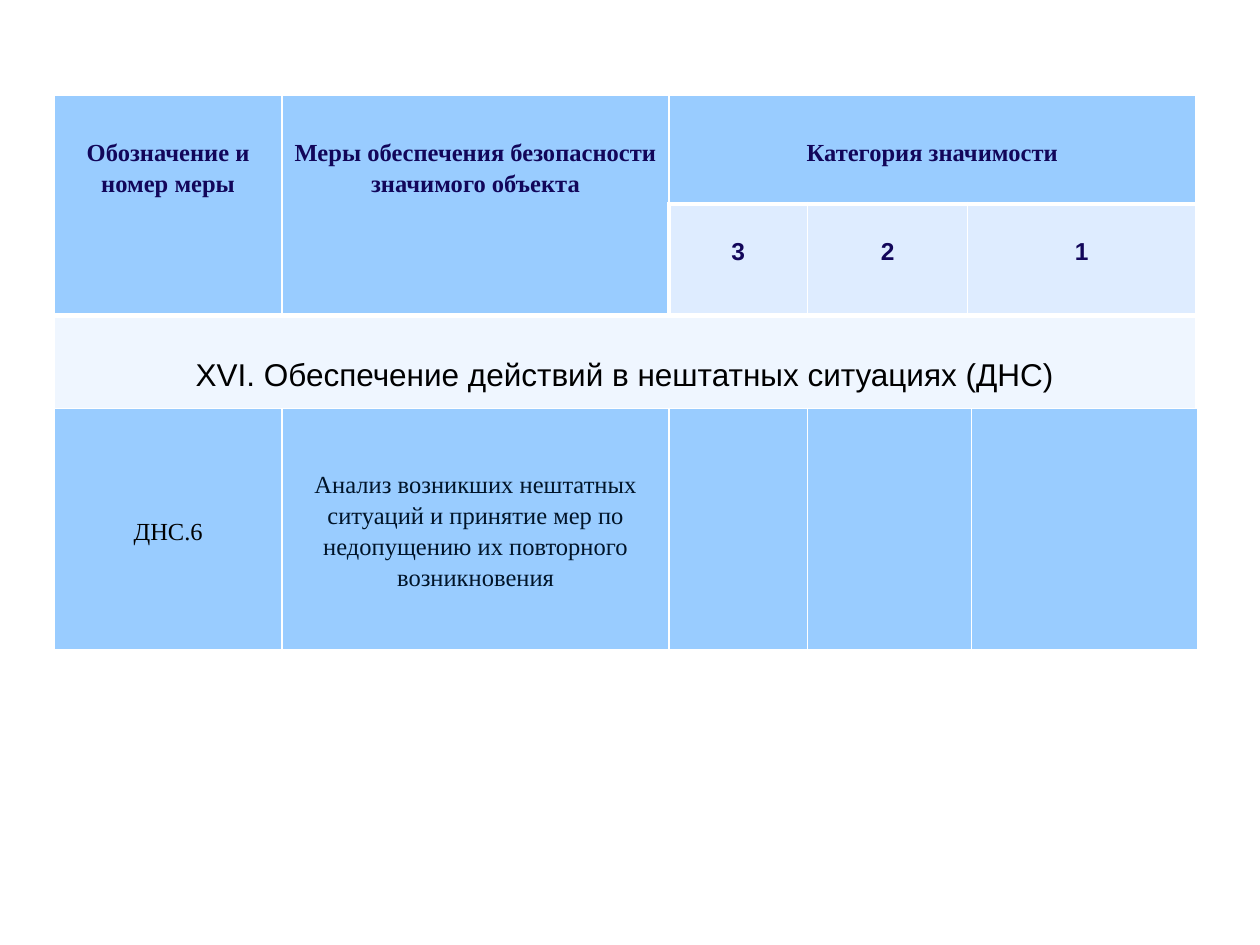
import dataclasses
import typing

import pptx
import pptx.dml.color
import pptx.enum.text
import pptx.oxml
import pptx.oxml.ns
import pptx.util

WIDE, HIGH = 10, 7.5
LEFT = 0.43
SERIF, SANS = "Times New Roman", "Arial"
HUES = {
    "head": "99CCFF", "level": "DEECFF", "band": "EFF6FF", "line": "FFFFFF",
    "navy": "12065A", "black": "000000", "ink": "001429",
}


@dataclasses.dataclass
class Item:
    row: int
    col: int
    text: str = ""
    fill: str = "head"
    hue: str = "navy"
    face: str = SERIF
    size: int = 14
    bold: bool = False
    rows: int = 1
    cols: int = 1
    top: float = 0.07
    mid: bool = False
    edges: tuple[int, int, int, int] = (1, 1, 1, 3)  # left, right, top, bottom


HEAD = [
    Item(0, 0, "Обозначение и номер меры", bold=True, rows=2, top=0.32),
    Item(0, 1, "Меры обеспечения безопасности значимого объекта",
         bold=True, rows=2, top=0.32),
    Item(0, 2, "Категория значимости", bold=True, cols=3, top=0.32),
    *[Item(1, 2 + i, level, "level", face=SANS, bold=True, top=0.27,
           edges=(1 if i else 3, 1, 3, 3)) for i, level in enumerate("321")],
    Item(2, 0, "XVI. Обеспечение действий в нештатных ситуациях (ДНС)",
         "band", "black", SANS, 18, cols=5, top=0.34, edges=(1, 1, 3, 1)),
]
BODY = [
    Item(0, 0, "ДНС.6", hue="black", mid=True),
    Item(0, 1, "Анализ возникших нештатных ситуаций и принятие мер по "
         "недопущению их повторного возникновения", hue="ink", mid=True),
    *[Item(0, col) for col in range(2, 5)],
]


def color(name: str) -> pptx.dml.color.RGBColor:
    return pptx.dml.color.RGBColor.from_string(HUES[name])


def edge(cell: typing.Any, sizes: tuple[int, int, int, int]) -> None:
    props = cell._tc.get_or_add_tcPr()
    for side, size in zip("LRTB", sizes):
        props.append(pptx.oxml.parse_xml(
            f'<a:ln{side} {pptx.oxml.ns.nsdecls("a")} w="{pptx.util.Pt(size)}">'
            f'<a:solidFill><a:srgbClr val="{HUES["line"]}"/></a:solidFill>'
            f'</a:ln{side}>'))


def write(cell: typing.Any, item: Item) -> None:
    serif = item.face == SERIF
    cell.margin_left = cell.margin_right = pptx.util.Inches(0.04 if serif else 0.1)
    cell.margin_top = pptx.util.Inches(item.top)
    cell.margin_bottom = pptx.util.Inches(0.07 if serif else 0.05)
    anchor = pptx.enum.text.MSO_ANCHOR
    cell.vertical_anchor = anchor.MIDDLE if item.mid else anchor.TOP
    cell.text = item.text
    para = cell.text_frame.paragraphs[0]
    para.alignment = pptx.enum.text.PP_ALIGN.CENTER
    para.line_spacing = 1.15 if serif else 1.0
    para.font.name, para.font.bold = item.face, item.bold
    para.font.size = pptx.util.Pt(item.size)
    para.font.color.rgb = color(item.hue)


def draw(slide: typing.Any, top: float, cols: list[float],
         rows: list[float], items: list[Item]) -> None:
    inch = pptx.util.Inches
    table = slide.shapes.add_table(
        len(rows), len(cols), inch(LEFT), inch(top),
        inch(sum(cols)), inch(sum(rows))).table
    table.first_row = table.horz_banding = False
    for col, width in zip(table.columns, cols):
        col.width = inch(width)
    for row, height in zip(table.rows, rows):
        row.height = inch(height)
    for item in items:
        for r in range(item.row, item.row + item.rows):
            for c in range(item.col, item.col + item.cols):
                part = table.cell(r, c)
                edge(part, item.edges)
                part.fill.solid()
                part.fill.fore_color.rgb = color(item.fill)
        cell = table.cell(item.row, item.col)
        if item.rows * item.cols > 1:
            cell.merge(table.cell(item.row + item.rows - 1,
                                  item.col + item.cols - 1))
        write(cell, item)


def main() -> None:
    deck = pptx.Presentation()
    deck.slide_width = pptx.util.Inches(WIDE)
    deck.slide_height = pptx.util.Inches(HIGH)
    slide = deck.slides.add_slide(deck.slide_layouts.get_by_name("Blank"))
    draw(slide, 0.76, [1.81, 3.07, 1.1, 1.27, 1.81], [0.86, 0.85, 0.94], HEAD)
    draw(slide, 3.24, [1.81, 3.07, 1.1, 1.3, 1.8], [1.93], BODY)
    deck.save("out.pptx")


if __name__ == "__main__":
    main()
